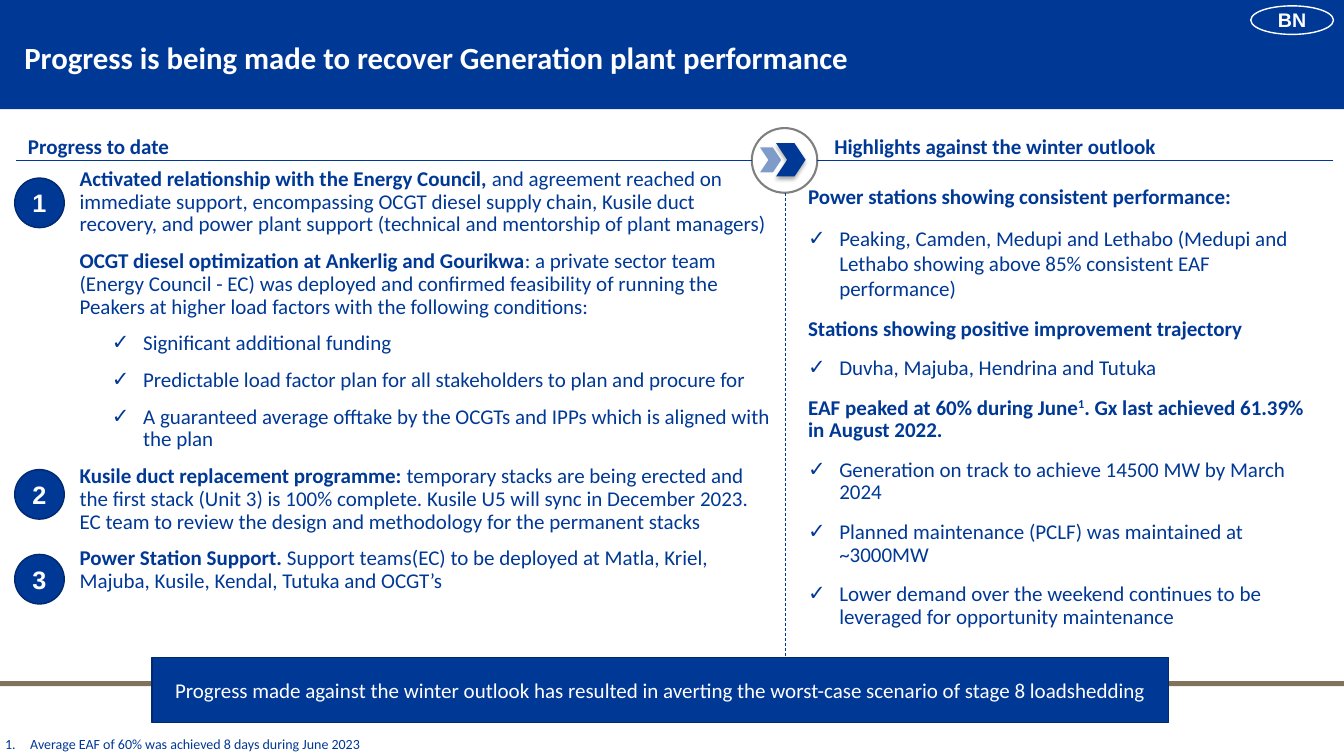
"""Build the slide on recovery of generation plant performance."""
from dataclasses import dataclass

from lxml import etree
from pptx import Presentation
from pptx.dml.color import RGBColor
from pptx.enum.dml import MSO_LINE
from pptx.enum.shapes import MSO_CONNECTOR, MSO_SHAPE
from pptx.enum.text import MSO_ANCHOR, MSO_AUTO_SIZE, PP_ALIGN
from pptx.oxml.ns import qn
from pptx.util import Emu, Inches, Pt

RECT, OVAL, CHEVRON = MSO_SHAPE.RECTANGLE, MSO_SHAPE.OVAL, MSO_SHAPE.CHEVRON
STRAIGHT, DASH = MSO_CONNECTOR.STRAIGHT, MSO_LINE.DASH
LEFT, CENTER = PP_ALIGN.LEFT, PP_ALIGN.CENTER
TOP, MIDDLE = MSO_ANCHOR.TOP, MSO_ANCHOR.MIDDLE
FIXED = MSO_AUTO_SIZE.NONE

COLOURS = {"blue": "003896", "navy": "00296F", "pale": "7F9BCA", "taupe": "83725B",
           "grey": "808080", "white": "FFFFFF", "black": "000000"}
COLUMNS, ROWS = 160, 90
CELL = Inches(7.5) / ROWS


@dataclass(frozen=True)
class Area:
    col: float
    row: float
    cols: float
    rows: float

    def emu(self) -> tuple[Emu, ...]:
        return tuple(Emu(round(n * CELL)) for n in (self.col, self.row, self.cols, self.rows))


@dataclass(frozen=True)
class Run:
    text: str
    bold: bool = False
    raised: bool = False


@dataclass(frozen=True)
class Para:
    runs: tuple[Run, ...]
    margin: float = 0
    hanging: float = 0
    bullet: str = ""
    level: int = 0
    spacing: float = 1.0


@dataclass(frozen=True)
class Figure:
    kind: int
    area: Area
    fill: str
    line: str = ""
    weight: float = 1
    label: str = ""
    size: float = 18
    font: str = "Arial"
    bold: bool = True


@dataclass(frozen=True)
class Rule:
    start: tuple[float, float]
    end: tuple[float, float]
    dashed: bool = False


def rgb(name: str) -> RGBColor:
    return RGBColor.from_string(COLOURS[name])


def plain(text: str, bold: bool = False, **layout) -> Para:
    return Para((Run(text, bold),), **layout)


def progress(lead: str, rest: str) -> Para:
    return Para((Run(lead, True), Run(rest)), margin=0.39, spacing=0.9)


def condition(text: str) -> Para:
    return plain(text, margin=1.02, hanging=0.31, bullet="✓", level=1, spacing=0.9)


def highlight(text: str, spacing: float = 0.9) -> Para:
    return plain(text, margin=0.31, hanging=0.31, bullet="✓", spacing=spacing)


def write(frame, paras, *, size=15.0, font="Calibri", colour="blue", align=LEFT,
          anchor=TOP, before=0, after=0, inset=(0.1, 0.05)) -> None:
    frame.word_wrap, frame.auto_size, frame.vertical_anchor = True, FIXED, anchor
    frame.margin_left = frame.margin_right = Inches(inset[0])
    frame.margin_top = frame.margin_bottom = Inches(inset[1])
    for index, para in enumerate(paras):
        line = frame.paragraphs[0] if index == 0 else frame.add_paragraph()
        props = line._p.get_or_add_pPr()
        props.set("marL", str(Inches(para.margin)))
        props.set("indent", str(-Inches(para.hanging)))
        if para.bullet == "1.":
            etree.SubElement(props, qn("a:buAutoNum"), type="arabicPeriod")
        elif para.bullet:
            etree.SubElement(props, qn("a:buChar"), char=para.bullet)
        else:
            etree.SubElement(props, qn("a:buNone"))
        line.level, line.alignment, line.line_spacing = para.level, align, para.spacing
        line.space_before, line.space_after = Pt(before if index else 0), Pt(after)
        for part in para.runs:
            run = line.add_run()
            run.text = part.text
            run.font.name, run.font.size, run.font.bold = font, Pt(size), part.bold
            run.font.color.rgb = rgb(colour)
            if part.raised:
                run._r.get_or_add_rPr().set("baseline", "30000")


def draw(shapes, figure: Figure):
    shape = shapes.add_shape(figure.kind, *figure.area.emu())
    shape.shadow.inherit = False
    shape.fill.solid()
    shape.fill.fore_color.rgb = rgb(figure.fill)
    if figure.line:
        shape.line.color.rgb = rgb(figure.line)
        shape.line.width = Pt(figure.weight)
    else:
        shape.line.fill.background()
    if figure.kind == CHEVRON:
        shape.adjustments[0] = 0.375
    if figure.label:
        write(shape.text_frame, [plain(figure.label, figure.bold)], size=figure.size,
              font=figure.font, colour="white", align=CENTER, anchor=MIDDLE, inset=(0, 0))
    return shape


def draw_rule(shapes, rule: Rule) -> None:
    ends = [Emu(round(n * CELL)) for n in (*rule.start, *rule.end)]
    connector = shapes.add_connector(STRAIGHT, *ends)
    connector.line.color.rgb = rgb("blue")
    connector.line.width = Pt(0.5)
    if rule.dashed:
        connector.line.dash_style = DASH
    etree.SubElement(connector._element.spPr, qn("a:effectLst"))


def cast_shadow(shape) -> None:
    effects = shape._element.spPr.find(qn("a:effectLst"))
    outer = etree.SubElement(effects, qn("a:outerShdw"), blurRad=str(Pt(3.1)),
                             dist=str(Pt(1.8)), dir="5400000", rotWithShape="0")
    tint = etree.SubElement(outer, qn("a:srgbClr"), val=COLOURS["black"])
    etree.SubElement(tint, qn("a:alpha"), val="35000")


def fill_placeholder(placeholder, area: Area, paras, **text_format) -> None:
    placeholder.left, placeholder.top, placeholder.width, placeholder.height = area.emu()
    write(placeholder.text_frame, paras, **text_format)


PROGRESS = [
    progress("Activated relationship with the Energy Council, ", "and agreement reached on immediate support, encompassing OCGT diesel supply chain, Kusile duct recovery, and power plant support (technical and mentorship of plant managers)"),
    progress("OCGT diesel optimization at Ankerlig and Gourikwa", ": a private sector team (Energy Council - EC) was deployed and confirmed feasibility of running the Peakers at higher load factors with the following conditions:"),
    condition("Significant additional funding"),
    condition("Predictable load factor plan for all stakeholders to plan and procure for"),
    condition("A guaranteed average offtake by the OCGTs and IPPs which is aligned with the plan"),
    progress("Kusile duct replacement programme: ", "temporary stacks are being erected and the first stack (Unit 3) is 100% complete. Kusile U5 will sync in December 2023. EC team to review the design and methodology for the permanent stacks"),
    progress("Power Station Support.", " Support teams(EC) to be deployed at Matla, Kriel, Majuba, Kusile, Kendal, Tutuka and OCGT’s"),
]
HIGHLIGHTS = [
    plain("Power stations showing consistent performance:", True),
    highlight("Peaking, Camden, Medupi and Lethabo (Medupi and Lethabo showing above 85% consistent EAF performance)", 1.0),
    plain("Stations showing positive improvement trajectory", True, spacing=0.9),
    highlight("Duvha, Majuba, Hendrina and Tutuka"),
    Para((Run("EAF peaked at 60% during June", True), Run("1", True, True), Run(". Gx last achieved 61.39% in August 2022.", True)), spacing=0.9),
    highlight("Generation on track to achieve 14500 MW by March 2024"),
    highlight("Planned maintenance (PCLF) was maintained at ~3000MW"),
    highlight("Lower demand over the weekend continues to be leveraged for opportunity maintenance"),
]
BANDS = [Figure(RECT, Area(0, 0, COLUMNS, 13), "blue"),
         Figure(RECT, Area(0, 81.1, COLUMNS, 0.6), "taupe")]
BADGES = [Figure(OVAL, Area(1.75, row, 5.9, 5.9), "blue", "navy", label=str(number))
          for number, row in enumerate((21.2, 55.9, 66), start=1)]
CALLOUTS = [
    Figure(RECT, Area(18.1, 78.25, 121, 7.8), "blue", "navy", size=15, font="Calibri", bold=False,
           label="Progress made against the winter outlook has resulted in averting the worst-case scenario of stage 8 loadshedding"),
    Figure(OVAL, Area(148.9, 0.7, 9.85, 3.4), "blue", "white", label="BN", size=14),
]
ARROW_SIGN = [Figure(OVAL, Area(89.5, 15.25, 7.8, 7.7), "white", "grey", 1.5),
              Figure(CHEVRON, Area(90.35, 17.5, 2.75, 3.1), "pale", "white", 0.75),
              Figure(CHEVRON, Area(92.4, 17.05, 3.5, 3.95), "blue")]
RULES = [Rule((89.5, 19.1), (1.95, 19.1)), Rule((158.75, 19.1), (97.3, 19.1)),
         Rule((93.5, 22.95), (93.5, 78.1), dashed=True)]
HEADINGS = {"Progress to date": Area(2.15, 15.25, 35.4, 4.2),
            "Highlights against the winter outlook": Area(98.15, 15.25, 57.25, 4.2)}


def main() -> None:
    deck = Presentation()
    deck.slide_width, deck.slide_height = Emu(round(COLUMNS * CELL)), Emu(round(ROWS * CELL))
    slide = deck.slides.add_slide(deck.slide_layouts[3])
    shapes = slide.shapes
    title, achieved, outlook = slide.placeholders
    fill_placeholder(title, Area(1.7, 2.75, 128, 8.75),
                     [plain("Progress is being made to recover Generation plant performance", True, spacing=0.9)],
                     size=22, colour="white", anchor=MIDDLE)
    fill_placeholder(achieved, Area(4.2, 19.45, 88.1, 60.25), PROGRESS, before=10, inset=(0.05, 0.05))
    fill_placeholder(outlook, Area(95, 21.25, 63.1, 59.3), HIGHLIGHTS, after=12)
    for band in BANDS:
        shapes._spTree.insert(2, draw(shapes, band)._element)
    for figure in BADGES + CALLOUTS:
        draw(shapes, figure)
    sign = shapes.add_group_shape()
    cast_shadow([draw(sign.shapes, figure) for figure in ARROW_SIGN][-1])
    for rule in RULES:
        draw_rule(shapes, rule)
    for heading, area in HEADINGS.items():
        write(shapes.add_textbox(*area.emu()).text_frame, [plain(heading, True)])
    footnote = plain("Average EAF of 60% was achieved 8 days during June 2023", margin=0.25, hanging=0.25, bullet="1.")
    write(shapes.add_textbox(*Area(0, 87, COLUMNS, 3).emu()).text_frame, [footnote], size=10, inset=(0.05, 0.05))
    deck.save("out.pptx")


if __name__ == "__main__":
    main()
